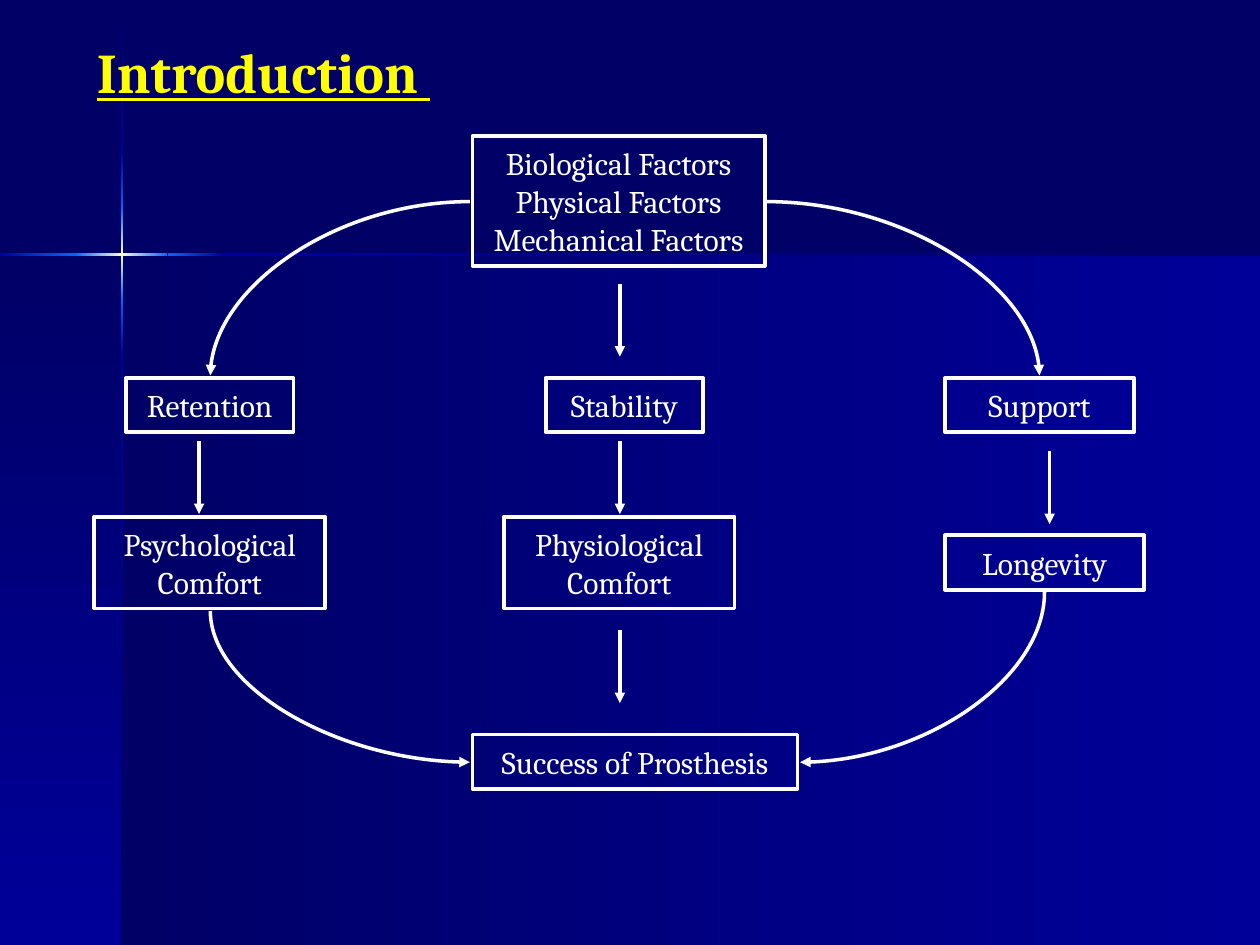
from copy import deepcopy
from lxml import etree
from pptx import Presentation
from pptx.dml.color import RGBColor
from pptx.enum.shapes import MSO_CONNECTOR, MSO_SHAPE
from pptx.enum.text import MSO_ANCHOR, PP_ALIGN
from pptx.oxml.ns import qn
from pptx.util import Inches, Pt

NAVY = RGBColor(0x00, 0x00, 0x66)
BLUE = RGBColor(0x00, 0x00, 0x99)
SKY = RGBColor(0x00, 0x66, 0xFF)
CREAM = RGBColor(0xFF, 0xFF, 0xCC)
WHITE = RGBColor(0xFF, 0xFF, 0xFF)
YELLOW = RGBColor(0xFF, 0xFF, 0x00)
RECT = MSO_SHAPE.RECTANGLE
STRAIGHT, CURVE = MSO_CONNECTOR.STRAIGHT, MSO_CONNECTOR.CURVE
CENTER, MIDDLE = PP_ALIGN.CENTER, MSO_ANCHOR.MIDDLE


class Chart:
    """Draws the parts of a flow chart on one slide in one style."""

    font = "Cambria"

    def __init__(self, slide):
        self.slide = slide
        self.shapes = slide.shapes
        fill = slide.background.fill
        fill.solid()
        fill.fore_color.rgb = NAVY

    def rect(self, *place):
        shape = self.shapes.add_shape(RECT, *map(Inches, place))
        shape.shadow.inherit = False
        return shape

    def blend(self, place, colors, down=False):
        shape = self.rect(*place)
        shape.line.fill.background()
        fill = shape.fill
        fill.gradient()
        fill.gradient_angle = 270 if down else 0
        stops = fill.gradient_stops
        for stop, color in zip(stops, colors):
            stop.color.rgb = color
        if len(colors) == 3:
            stops[1].position = 0.5
            items = shape.element.spPr.find(".//" + qn("a:gsLst"))
            items.append(deepcopy(items[0]))
            items[-1].set("pos", "100000")

    def label(self, frame, lines, size, color):
        frame.text = "\n".join(lines)
        for para in frame.paragraphs:
            para.font.name = self.font
            para.font.size = Pt(size)
            para.font.color.rgb = color

    def box(self, place, *lines, wrap=True):
        shape = self.rect(*place)
        shape.fill.background()
        shape.line.color.rgb = WHITE
        shape.line.width = Pt(2.25)
        frame = shape.text_frame
        frame.word_wrap = wrap
        frame.vertical_anchor = MIDDLE
        self.label(frame, lines, 18, WHITE)
        for para in frame.paragraphs:
            para.alignment = CENTER

    def title(self, place, text):
        frame = self.shapes.add_textbox(*map(Inches, place)).text_frame
        frame.word_wrap = False
        self.label(frame, [text], 32, YELLOW)
        font = frame.paragraphs[0].font
        font.bold = font.underline = True

    def link(self, kind, start, end, tip="a:tailEnd"):
        line = self.shapes.add_connector(kind, *map(Inches, start + end))
        line.line.color.rgb = WHITE
        line.line.width = Pt(2)
        props = line.element.spPr
        etree.SubElement(props.find(qn("a:ln")), qn(tip), type="triangle")
        etree.SubElement(props, qn("a:effectLst"))
        return line

    def arrow(self, x, top):
        self.link(STRAIGHT, (x, top), (x, top + 0.58))

    def bend(self, start, end, tip="a:tailEnd"):
        line = self.link(CURVE, start, end, tip)
        line.element.spPr.find(qn("a:prstGeom")).set("prst", "curvedConnector2")


def main():
    deck = Presentation()
    deck.slide_width, deck.slide_height = Inches(10), Inches(7.5)
    chart = Chart(deck.slides.add_slide(deck.slide_layouts[6]))

    chart.blend((0.97, 2.02, 9.03, 5.48), (NAVY, BLUE))
    chart.blend((0, 2.02, 0.97, 5.48), (NAVY, BLUE), True)
    rise, fall, glow = (BLUE, SKY), (SKY, BLUE), (SKY, CREAM, SKY)
    tall = (0.01, 1.21, 1.65, 2.38, 2.82, 7.5)
    hues = ((NAVY, BLUE), rise, glow, fall, (BLUE, NAVY))
    for top, end, colors in zip(tall, tall[1:], hues):
        chart.blend((0.96, top, 0.02, end - top), colors, True)
    wide = (0, 0.6, 1.33, 1.77, 10)
    for left, end, colors in zip(wide, wide[1:], hues[1:]):
        chart.blend((left, 2.01, end - left, 0.02), colors)

    chart.box((3.75, 1.08, 2.32, 1.03), "Biological Factors",
              "Physical Factors", "Mechanical Factors", wrap=False)
    for place, text in (
        ((3.75, 5.83, 2.58, 0.43), "Success of Prosthesis"),
        ((7.5, 3, 1.5, 0.43), "Support"),
        ((7.5, 4.25, 1.58, 0.43), "Longevity"),
        ((1, 3, 1.33, 0.43), "Retention"),
        ((0.75, 4.1, 1.83, 0.73), "Psychological Comfort"),
        ((4.33, 3, 1.25, 0.43), "Stability"),
        ((4, 4.1, 1.83, 0.73), "Physiological Comfort"),
    ):
        chart.box(place, text)

    chart.bend((6.08, 1.6), (8.25, 2.98))
    chart.bend((3.73, 1.6), (1.67, 2.98))
    chart.bend((3.73, 6.05), (1.67, 4.85), "a:headEnd")
    chart.bend((6.35, 6.05), (8.29, 4.7), "a:headEnd")
    for x, top in ((4.92, 2.25), (4.92, 3.5), (4.92, 5), (8.33, 3.58), (1.58, 3.5)):
        chart.arrow(x, top)

    chart.title((0.67, 0.25, 2.93, 0.64), "Introduction ")
    deck.save("out.pptx")


if __name__ == "__main__":
    main()
